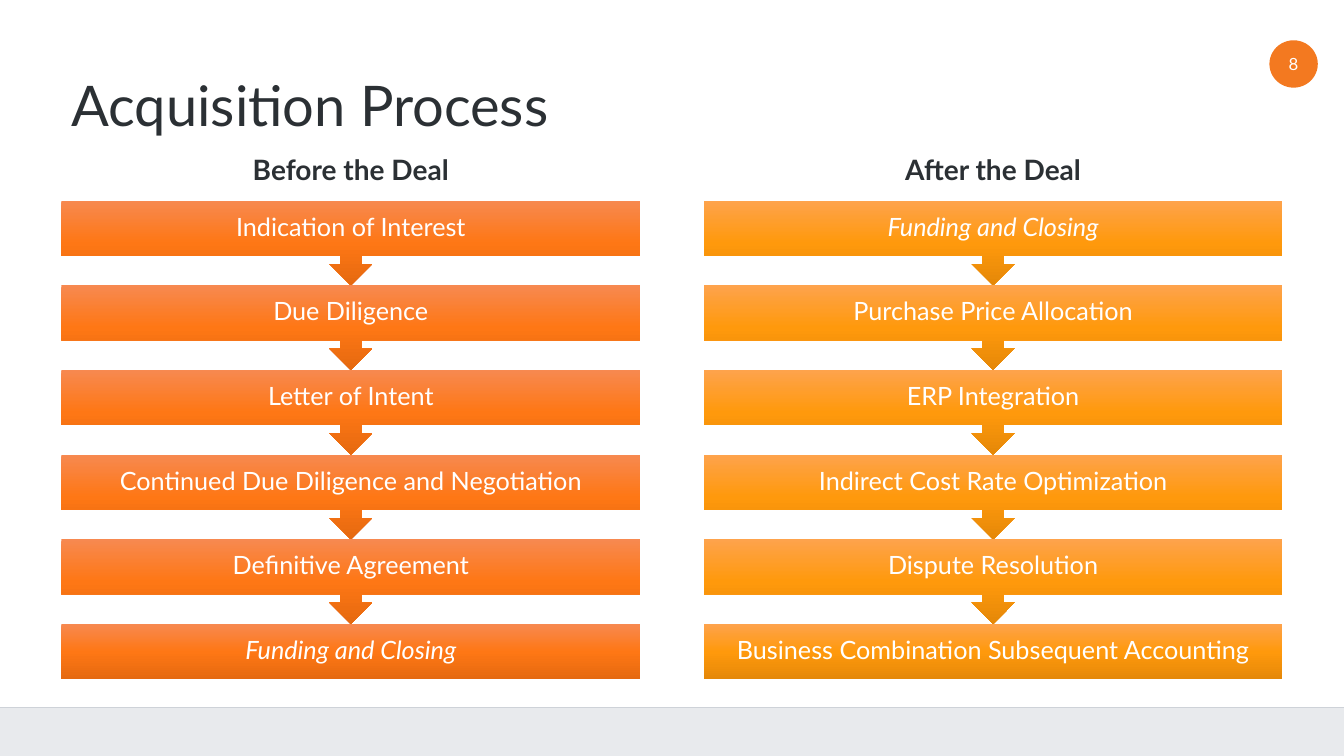
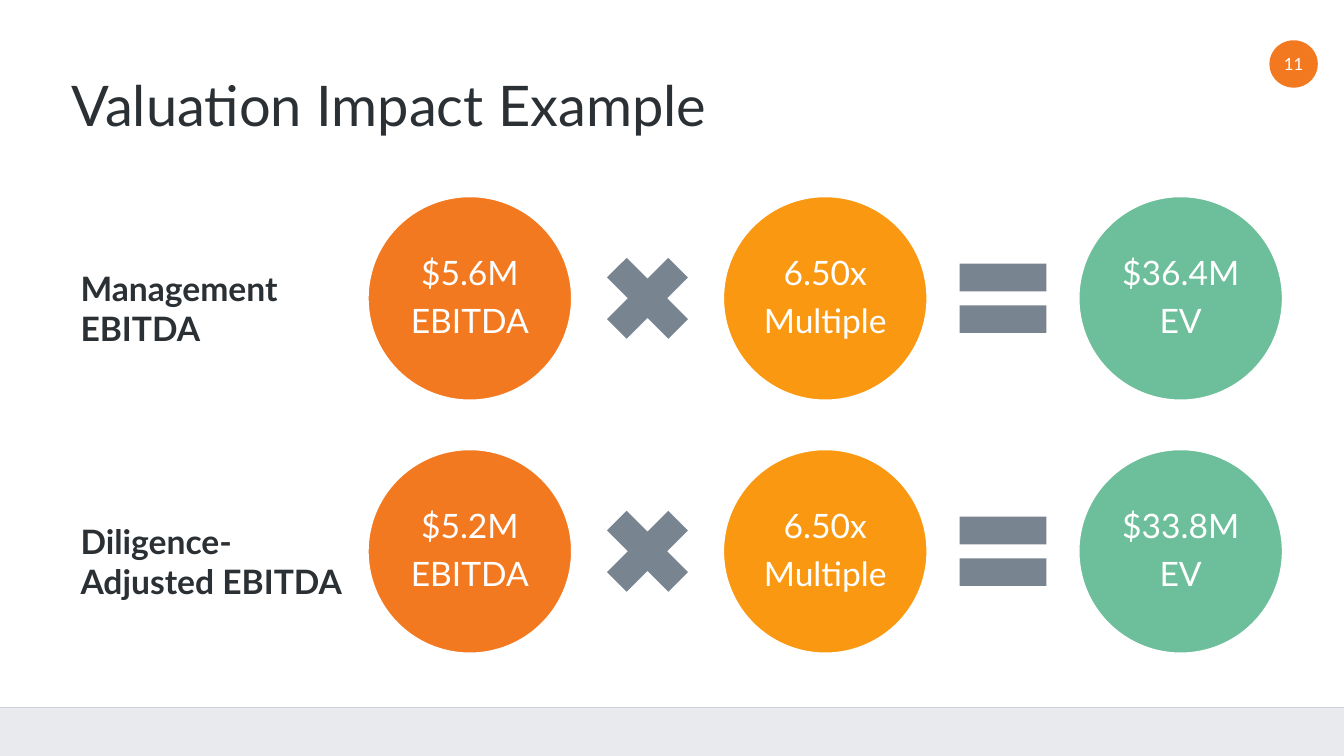
import copy

import pptx
import pptx.dml.color
import pptx.enum.shapes
import pptx.enum.text
import pptx.oxml.ns
import pptx.util
from lxml import etree

Inches = pptx.util.Inches
Pt = pptx.util.Pt
RGBColor = pptx.dml.color.RGBColor
Shape = pptx.enum.shapes.MSO_SHAPE
Align = pptx.enum.text.PP_ALIGN
Anchor = pptx.enum.text.MSO_ANCHOR

INK = RGBColor(0x2B, 0x30, 0x34)
WHITE = RGBColor(0xFF, 0xFF, 0xFF)
ORANGE = RGBColor(0xF3, 0x79, 0x20)
AMBER = RGBColor(0xFA, 0x98, 0x11)
GREEN = RGBColor(0x6D, 0xBE, 0x9A)
SLATE = RGBColor(0x78, 0x85, 0x91)
BAND = RGBColor(0xE8, 0xEA, 0xED)
RULE = RGBColor(0xCE, 0xD2, 0xD8)
ORANGE_GRADIENT = [RGBColor(0xF7, 0x89, 0x50), RGBColor(0xFE, 0x77, 0x15), RGBColor(0xE5, 0x69, 0x0F)]
AMBER_GRADIENT = [RGBColor(0xFE, 0xA3, 0x4C), RGBColor(0xFF, 0x99, 0x0C), RGBColor(0xE5, 0x88, 0x08)]

FONT = "Lato"
SLIDE_WIDTH, SLIDE_HEIGHT = 13.33, 7.5
BAND_TOP = 7.02
MARGIN = 0.61


class Deck:
    def __init__(self):
        self.presentation = pptx.Presentation()
        self.presentation.slide_width = Inches(SLIDE_WIDTH)
        self.presentation.slide_height = Inches(SLIDE_HEIGHT)
        self.slide = None

    def start_slide(self, title, number):
        self.slide = self.presentation.slides.add_slide(self.presentation.slide_layouts[6])
        self.shape(Shape.RECTANGLE, 0, BAND_TOP, SLIDE_WIDTH, SLIDE_HEIGHT - BAND_TOP, BAND)
        self.rule(BAND_TOP)
        self.text(title, MARGIN, 0.4, 12.12, 1.35, 40, anchor=Anchor.MIDDLE, spacing=0.9)
        badge = self.shape(Shape.OVAL, 12.59, 0.4, 0.48, 0.47, ORANGE)
        self.fill_text(badge, [number], 12, WHITE, inset=0)

    def rule(self, top):
        line = self.slide.shapes.add_connector(
            pptx.enum.shapes.MSO_CONNECTOR.STRAIGHT, 0, Inches(top), Inches(SLIDE_WIDTH), Inches(top))
        line.line.color.rgb = RULE
        line.line.width = Pt(0.75)
        etree.SubElement(line._element.spPr, pptx.oxml.ns.qn("a:effectLst"))

    def shape(self, kind, left, top, width, height, color, outline=None):
        shape = self.slide.shapes.add_shape(kind, Inches(left), Inches(top), Inches(width), Inches(height))
        shape.shadow.inherit = False
        if isinstance(color, list):
            self.gradient(shape, color)
        else:
            shape.fill.solid()
            shape.fill.fore_color.rgb = color
        if outline is None:
            shape.line.fill.background()
        else:
            shape.line.color.rgb = outline
            shape.line.width = Pt(1)
        return shape

    def gradient(self, shape, colors):
        shape.fill.gradient()
        shape.fill.gradient_angle = 270
        stop_list = shape._element.spPr.find(".//" + pptx.oxml.ns.qn("a:gsLst"))
        stop_list.append(copy.deepcopy(stop_list[-1]))
        for index, (stop, color) in enumerate(zip(shape.fill.gradient_stops, colors)):
            stop.position = index / (len(colors) - 1)
            stop.color.rgb = color

    def fill_text(self, shape, lines, size, color, inset=None, align=Align.CENTER, anchor=Anchor.MIDDLE,
                  spacing=None, bold=False, italic=False):
        frame = shape.text_frame
        frame.word_wrap = True
        frame.vertical_anchor = anchor
        if inset is not None:
            frame.margin_left = frame.margin_right = Inches(inset)
            frame.margin_top = frame.margin_bottom = Inches(inset)
        for index, line in enumerate(lines):
            paragraph = frame.add_paragraph() if index else frame.paragraphs[0]
            paragraph.alignment = align
            paragraph.line_spacing = spacing
            if index:
                paragraph.space_before = Pt(size * 0.35)
            run = paragraph.add_run()
            run.text = line
            run.font.name = FONT
            run.font.size = Pt(size)
            run.font.color.rgb = color
            run.font.bold = bold
            run.font.italic = italic

    def text(self, text, left, top, width, height, size, align=Align.LEFT, anchor=Anchor.TOP,
             spacing=None, bold=False):
        box = self.slide.shapes.add_textbox(Inches(left), Inches(top), Inches(width), Inches(height))
        self.fill_text(box, [text], size, INK, align=align, anchor=anchor, spacing=spacing, bold=bold)

    def process(self, heading, left, steps, colors, italic_step):
        width, first_top, pitch, box_height = 5.74, 1.99, 0.84, 0.55
        self.text(heading, left, 1.46, width, 0.44, 20, align=Align.CENTER, bold=True)
        for index, step in enumerate(steps):
            last = index == len(steps) - 1
            kind = Shape.RECTANGLE if last else Shape.DOWN_ARROW_CALLOUT
            height = box_height if last else pitch
            box = self.shape(kind, left, first_top + index * pitch, width, height, colors)
            self.fill_text(box, [step], 18, WHITE, inset=0.14, spacing=0.9, italic=step == italic_step)

    def equation(self, label, top, terms):
        first_left, last_left, diameter, operator_size = 3.65, 10.7, 2.02, 1.17
        pitch = (last_left - first_left) / (len(terms) - 1)
        operator_offset = (pitch + diameter - operator_size) / 2
        operator_top = top + (diameter - operator_size) / 2
        for index, (lines, color) in enumerate(zip(terms, (ORANGE, AMBER, GREEN))):
            left = first_left + index * pitch
            circle = self.shape(Shape.OVAL, left, top, diameter, diameter, color, WHITE)
            self.fill_text(circle, lines, 24, WHITE, inset=0.03, spacing=0.9)
            if index < len(terms) - 1:
                operator = (Shape.MATH_MULTIPLY, Shape.MATH_EQUAL)[index]
                self.shape(operator, left + operator_offset, operator_top, operator_size, operator_size, SLATE)
        self.text(label, 0.7, top + 0.66, 2.95, 0.91, 24, bold=True)


def main():
    deck = Deck()

    deck.start_slide("Acquisition Process", "8")
    closing = "Funding and Closing"
    deck.process("Before the Deal", MARGIN, [
        "Indication of Interest",
        "Due Diligence",
        "Letter of Intent",
        "Continued Due Diligence and Negotiation",
        "Definitive Agreement",
        closing,
    ], ORANGE_GRADIENT, closing)
    deck.process("After the Deal", 6.98, [
        closing,
        "Purchase Price Allocation",
        "ERP Integration",
        "Indirect Cost Rate Optimization",
        "Dispute Resolution",
        "Business Combination Subsequent Accounting",
    ], AMBER_GRADIENT, closing)

    deck.start_slide("Valuation Impact Example", "11")
    for label, top, earnings, value in (
        ("Management EBITDA", 1.95, "$5.6M", "$36.4M"),
        ("Diligence-Adjusted EBITDA", 4.46, "$5.2M", "$33.8M"),
    ):
        deck.equation(label, top, [(earnings, "EBITDA"), ("6.50x", "Multiple"), (value, "EV")])

    deck.presentation.save("out.pptx")


if __name__ == "__main__":
    main()
